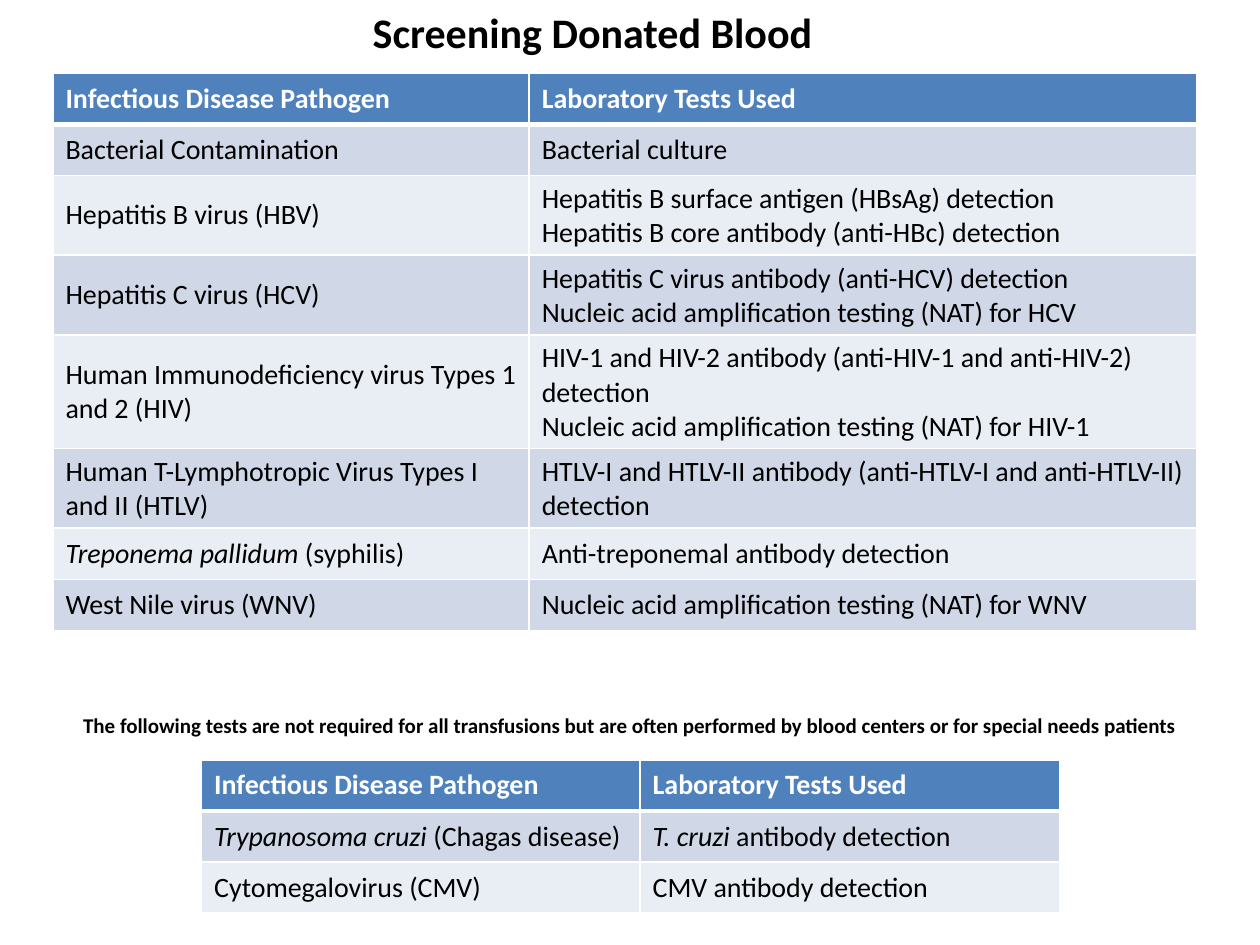
from pptx import Presentation
from pptx.dml.color import RGBColor
from pptx.enum.text import MSO_ANCHOR, PP_ALIGN
from pptx.oxml.ns import qn
from pptx.util import Inches, Pt
from lxml import etree

MIDDLE = MSO_ANCHOR.MIDDLE
LEFT, CENTER = PP_ALIGN.LEFT, PP_ALIGN.CENTER
BLACK = RGBColor(0x00, 0x00, 0x00)
WHITE = RGBColor(0xFF, 0xFF, 0xFF)
HEADER_BLUE = RGBColor(0x4F, 0x81, 0xBD)
BANDS = (RGBColor(0xE9, 0xED, 0xF4), RGBColor(0xD0, 0xD8, 0xE8))

GRID_COLUMNS, GRID_ROWS = 100, 75
TABLE_ROW = 4.06
HEADINGS = ("Infectious Disease Pathogen", "Laboratory Tests Used")

REQUIRED_TESTS = (
    ("Bacterial Contamination", "Bacterial culture"),
    ("Hepatitis B virus (HBV)",
     "Hepatitis B surface antigen (HBsAg) detection\n"
     "Hepatitis B core antibody (anti-HBc) detection"),
    ("Hepatitis C virus (HCV)",
     "Hepatitis C virus antibody (anti-HCV) detection\n"
     "Nucleic acid amplification testing (NAT) for HCV"),
    ("Human Immunodeficiency virus Types 1 and 2 (HIV)",
     "HIV-1 and HIV-2 antibody (anti-HIV-1 and anti-HIV-2) detection\n"
     "Nucleic acid amplification testing (NAT) for HIV-1"),
    ("Human T-Lymphotropic Virus Types I and II (HTLV)",
     "HTLV-I and HTLV-II antibody (anti-HTLV-I and anti-HTLV-II) detection"),
    ("*Treponema pallidum* (syphilis)", "Anti-treponemal antibody detection"),
    ("West Nile virus (WNV)",
     "Nucleic acid amplification testing (NAT) for WNV"),
)
OPTIONAL_TESTS = (
    ("*Trypanosoma cruzi *(Chagas disease)", "*T. cruzi* antibody detection"),
    ("Cytomegalovirus (CMV)", "CMV antibody detection"),
)


def write(frame, text, size=16, color=BLACK, bold=False, align=LEFT):
    for index, line in enumerate(text.split("\n")):
        paragraph = frame.add_paragraph() if index else frame.paragraphs[0]
        paragraph.alignment = align
        for part, words in enumerate(line.split("*")):
            if words:
                run = paragraph.add_run()
                run.text = words
                run.font.name = "Calibri"
                run.font.size = Pt(size)
                run.font.bold = bold
                run.font.italic = part % 2 == 1
                run.font.color.rgb = color


class ScreeningSlide:
    def __init__(self, deck):
        self.column = deck.slide_width / GRID_COLUMNS
        self.row = deck.slide_height / GRID_ROWS
        self.slide = deck.slides.add_slide(deck.slide_layouts[6])

    def place(self, left, top, width, height):
        return (round(left * self.column), round(top * self.row),
                round(width * self.column), round(height * self.row))

    def label(self, area, text, wrap=True, **style):
        frame = self.slide.shapes.add_textbox(*self.place(*area)).text_frame
        frame.word_wrap = wrap
        write(frame, text, bold=True, **style)

    def border(self, cell, side, points):
        line = etree.SubElement(cell._tc.get_or_add_tcPr(), qn(f"a:ln{side}"),
                                w=str(Pt(points)))
        fill = etree.SubElement(line, qn("a:solidFill"))
        etree.SubElement(fill, qn("a:srgbClr"), val=str(WHITE))

    def table(self, left, top, widths, tests):
        rows = (HEADINGS, *tests)
        area = self.place(left, top, sum(widths), TABLE_ROW * len(rows))
        table = self.slide.shapes.add_table(len(rows), len(widths), *area).table
        for column, width in zip(table.columns, widths):
            column.width = round(width * self.column)
        for r, texts in enumerate(rows):
            header = r == 0
            for c, text in enumerate(texts):
                cell = table.cell(r, c)
                cell.vertical_anchor = MIDDLE
                for side in "LRTB":
                    thick = (r, side) in ((0, "B"), (1, "T"))
                    self.border(cell, side, 3 if thick else 1)
                cell.fill.solid()
                cell.fill.fore_color.rgb = HEADER_BLUE if header else BANDS[r % 2]
                write(cell.text_frame, text, bold=header,
                      color=WHITE if header else BLACK)


def main():
    deck = Presentation()
    deck.slide_width, deck.slide_height = Inches(10), Inches(7.5)
    screening = ScreeningSlide(deck)
    screening.label((28.6, 0, 37.3, 5), "Screening Donated Blood",
                    wrap=False, size=24)
    screening.table(4.2, 5.8, (37.8, 53), REQUIRED_TESTS)
    screening.label(
        (2.5, 56.1, 95, 3),
        "The following tests are not required for all transfusions but are "
        "often performed by blood centers or for special needs patients",
        size=12, align=CENTER)
    screening.table(16, 60.3, (34.8, 33.3), OPTIONAL_TESTS)
    deck.save("out.pptx")


if __name__ == "__main__":
    main()
